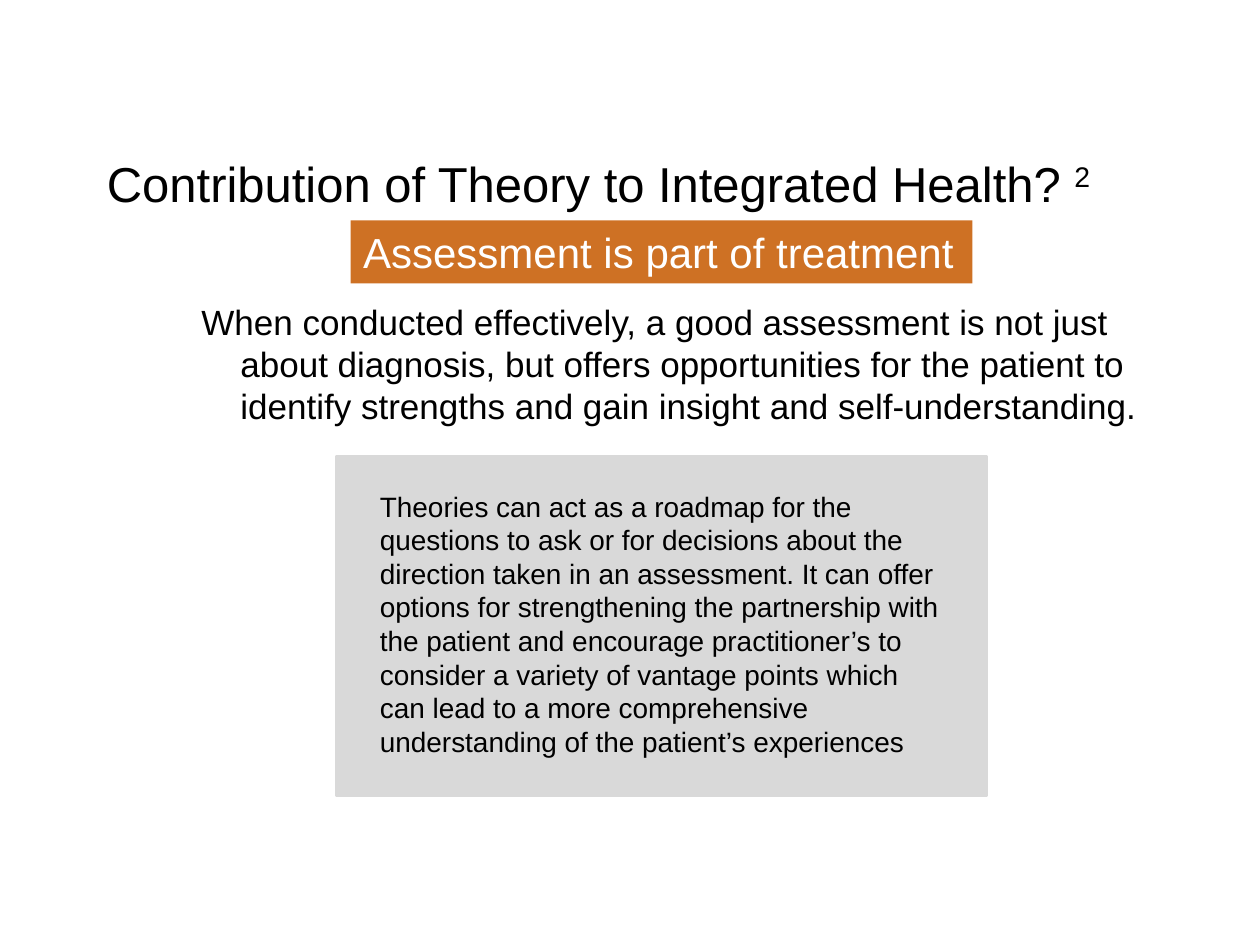
from dataclasses import dataclass

from pptx import Presentation
from pptx.dml.color import RGBColor
from pptx.enum.shapes import MSO_SHAPE
from pptx.enum.text import MSO_ANCHOR, PP_ALIGN
from pptx.util import Inches, Pt

RECTANGLE = MSO_SHAPE.RECTANGLE
TOP = MSO_ANCHOR.TOP
LEFT = PP_ALIGN.LEFT


@dataclass(frozen=True)
class Theme:
    font: str = "Arial"
    ink: str = "000000"
    light: str = "FFFFFF"
    panel: str = "D9D9D9"
    banner: str = "CE7124"
    title_size: int = 28
    banner_size: int = 24
    body_size: int = 20
    note_size: int = 16


theme = Theme()
deck = Presentation()
deck.slide_width, deck.slide_height = Inches(10), Inches(7.5)
page = deck.slides.add_slide(deck.slide_layouts[6])

COLUMN = deck.slide_width / 120
ROW = deck.slide_height / 90


def place(left, top, width, height, fill=None):
    """Add a filled rectangle, or a text box if no fill is given, in grid units."""
    area = [round(n * unit) for n, unit in
            zip((left, top, width, height), (COLUMN, ROW, COLUMN, ROW))]
    if fill is None:
        box = page.shapes.add_textbox(*area)
    else:
        box = page.shapes.add_shape(RECTANGLE, *area)
        box.shadow.inherit = False
        box.fill.solid()
        box.fill.fore_color.rgb = RGBColor.from_string(fill)
        box.line.fill.background()
    box.text_frame.word_wrap = True
    box.text_frame.vertical_anchor = TOP
    return box


def write(box, text, size, color=theme.ink):
    """Add a run to the first paragraph of the box."""
    para = box.text_frame.paragraphs[0]
    para.alignment = LEFT
    span = para.add_run()
    span.text = text
    span.font.name = theme.font
    span.font.size = Pt(size)
    span.font.color.rgb = RGBColor.from_string(color)
    return span


panel = place(32, 43.5, 62, 32.25, theme.panel)
panel.line.color.rgb = RGBColor.from_string(theme.panel)
panel.line.width = Pt(1.5)

title = place(9, 14, 105, 11)
write(title, "Contribution of Theory to Integrated Health? ", theme.title_size)
superscript = write(title, "2", theme.title_size)
superscript.font._element.set("baseline", "30000")

body = place(12, 28, 102, 13)
write(body, "When conducted effectively, a good assessment is not just about diagnosis, "
      "but offers opportunities for the patient to identify strengths and gain insight "
      "and self-understanding.", theme.body_size)
hanging = body.text_frame.paragraphs[0]._p.get_or_add_pPr()
hanging.set("marL", str(Inches(0.81)))
hanging.set("indent", str(Inches(-0.31)))

note = place(35, 46, 56, 28)
write(note, "Theories can act as a roadmap for the questions to ask or for decisions about "
      "the direction taken in an assessment. It can offer options for strengthening the "
      "partnership with the patient and encourage practitioner’s to consider a variety of "
      "vantage points which can lead to a more comprehensive understanding of the "
      "patient’s experiences", theme.note_size)

banner = place(33.4, 21, 59.2, 6, theme.banner)
banner.text_frame.word_wrap = False
write(banner, "Assessment is part of treatment", theme.banner_size, theme.light)

deck.save("out.pptx")
